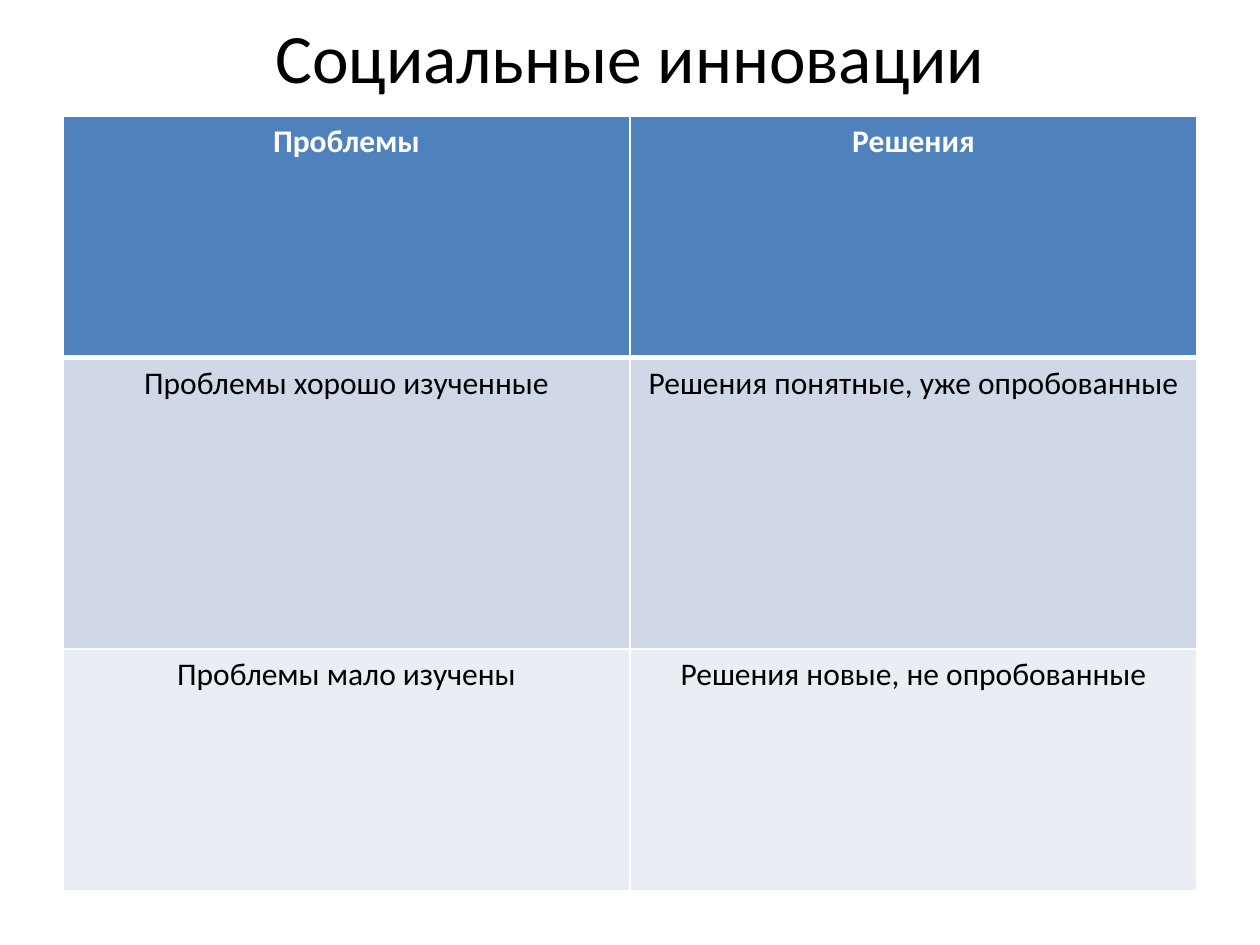
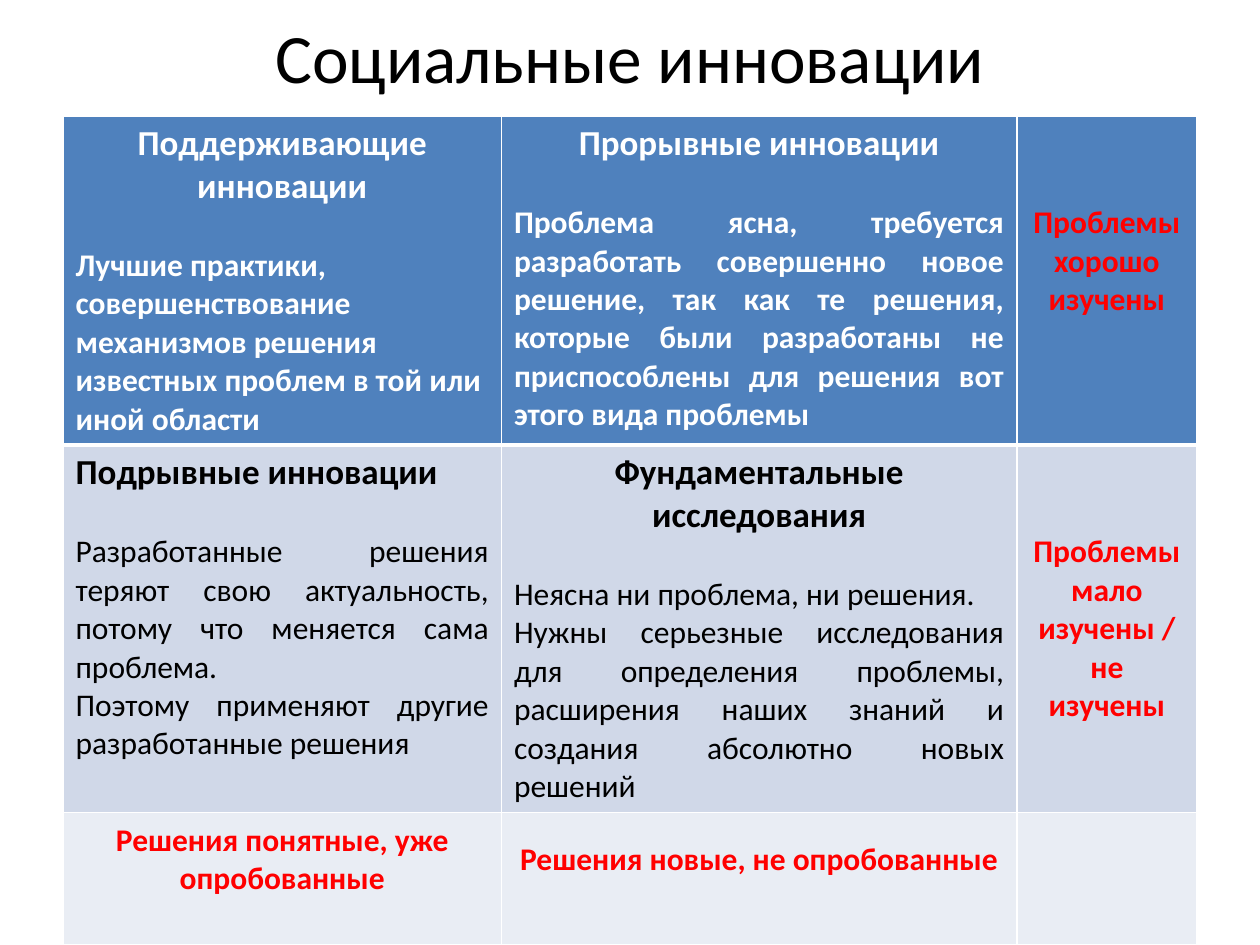
"""Build two slides with tables about social innovations."""
import lxml.etree
import pptx
import pptx.dml.color
import pptx.enum.text
import pptx.oxml.ns
import pptx.util

PIXEL = 9144
COLORS = {
    "white": "FFFFFF",
    "black": "000000",
    "red": "FF0000",
    "header": "4F81BD",
    "band": "D0D8E8",
    "light band": "E9EDF4",
}
ROW_FILLS = ["header", "band", "light band"]
ALIGN = pptx.enum.text.PP_ALIGN
ANCHOR = pptx.enum.text.MSO_ANCHOR

STYLES = {
    "title": {"font": {"size": 39.6, "bold": False}, "paragraph": {"alignment": ALIGN.CENTER}},
    "heading": {"font": {"size": 20, "bold": True}, "paragraph": {"alignment": ALIGN.CENTER}},
    "left heading": {"font": {"size": 20, "bold": True}, "paragraph": {"alignment": ALIGN.LEFT}},
    "label": {"font": {"size": 18, "bold": True}, "paragraph": {"alignment": ALIGN.CENTER}},
    "centered": {"font": {"size": 18, "bold": False}, "paragraph": {"alignment": ALIGN.CENTER}},
    "bold left": {"font": {"size": 18, "bold": True}, "paragraph": {"alignment": ALIGN.LEFT}},
    "bold body": {"font": {"size": 18, "bold": True}, "paragraph": {"alignment": ALIGN.JUSTIFY}},
    "body": {"font": {"size": 18, "bold": False}, "paragraph": {"alignment": ALIGN.JUSTIFY}},
}
GAP = pptx.util.Pt(22)
RAISED = {"vertical_anchor": ANCHOR.MIDDLE, "margin_bottom": 35 * PIXEL}
MIDDLE = {"vertical_anchor": ANCHOR.MIDDLE}


def set_attributes(target, values):
    """Set every named value on the target."""
    for name, value in values.items():
        setattr(target, name, value)


class SlideBuilder:
    """Holds the shared style and the current slide."""

    font_name = "Calibri"

    def __init__(self, presentation):
        self.presentation = presentation
        self.slide = None

    def add_slide(self, title):
        """Start a slide with a title."""
        self.slide = self.presentation.slides.add_slide(self.presentation.slide_layouts[5])
        shape = self.slide.shapes.title
        box = {"left": 50, "top": 13, "width": 900, "height": 63}
        set_attributes(shape, {name: value * PIXEL for name, value in box.items()})
        frame = shape.text_frame
        set_attributes(frame, {"vertical_anchor": ANCHOR.MIDDLE, "word_wrap": True,
                               "auto_size": pptx.enum.text.MSO_AUTO_SIZE.NONE})
        self.add_text(frame.paragraphs[0], title, "title", "black")

    def add_text(self, paragraph, text, style, color):
        """Fill one paragraph with formatted text."""
        run = paragraph.add_run()
        run.text = text
        set_attributes(paragraph, STYLES[style]["paragraph"])
        values = dict(STYLES[style]["font"], name=self.font_name)
        values["size"] = pptx.util.Pt(values["size"])
        set_attributes(run.font, values)
        run.font.color.rgb = pptx.dml.color.RGBColor.from_string(COLORS[color])

    def add_borders(self, cell, row):
        """Draw white cell borders, thicker below the header."""
        widths = {"lnL": 1, "lnR": 1, "lnT": 3 if row == 1 else 1, "lnB": 3 if row == 0 else 1}
        qualified = pptx.oxml.ns.qn
        properties = cell._tc.get_or_add_tcPr()
        for side, width in widths.items():
            line = lxml.etree.SubElement(properties, qualified(f"a:{side}"), w=str(pptx.util.Pt(width)))
            fill = lxml.etree.SubElement(line, qualified("a:solidFill"))
            lxml.etree.SubElement(fill, qualified("a:srgbClr"), val=COLORS["white"])

    def fill_cell(self, cell, row, layout, entries):
        """Format one cell and add its paragraphs."""
        self.add_borders(cell, row)
        cell.fill.solid()
        cell.fill.fore_color.rgb = pptx.dml.color.RGBColor.from_string(COLORS[ROW_FILLS[row]])
        set_attributes(cell, layout)
        for index, (text, style, color) in enumerate(entries):
            frame = cell.text_frame
            paragraph = frame.add_paragraph() if index else frame.paragraphs[0]
            self.add_text(paragraph, text, style, color)
            if index == 1:
                paragraph.space_before = GAP

    def add_table(self, widths, heights, rows):
        """Add a table below the title."""
        bounds = [50, 92, sum(widths), sum(heights)]
        shape = self.slide.shapes.add_table(len(heights), len(widths), *(value * PIXEL for value in bounds))
        table = shape.table
        for column, width in zip(table.columns, widths):
            column.width = width * PIXEL
        for row, height in zip(table.rows, heights):
            row.height = height * PIXEL
        for row_index, row in enumerate(rows):
            for column_index, (layout, entries) in enumerate(row):
                self.fill_cell(table.cell(row_index, column_index), row_index, layout, entries)


OVERVIEW = [
    [({}, [(text, style, color)]) for text in texts]
    for texts, style, color in [
        (["Проблемы", "Решения"], "label", "white"),
        (["Проблемы хорошо изученные", "Решения понятные, уже опробованные"], "centered", "black"),
        (["Проблемы мало изучены", "Решения новые, не опробованные"], "centered", "black"),
    ]
]

INNOVATION_TYPES = [
    [
        ({}, [("Поддерживающие инновации", "heading", "white"),
              ("Лучшие практики, совершенствование механизмов решения известных проблем "
               "в той или иной области", "bold left", "white")]),
        ({}, [("Прорывные инновации", "heading", "white"),
              ("Проблема ясна, требуется разработать совершенно новое решение, так как те решения, "
               "которые были разработаны не приспособлены для решения вот этого вида проблемы",
               "bold body", "white")]),
        (RAISED, [("Проблемы хорошо изучены", "label", "red")]),
    ],
    [
        ({}, [("Подрывные инновации", "left heading", "black"),
              ("Разработанные решения теряют свою актуальность, потому что меняется сама проблема.",
               "body", "black"),
              ("Поэтому применяют другие разработанные решения", "body", "black")]),
        ({}, [("Фундаментальные исследования", "heading", "black"),
              ("Неясна ни проблема, ни решения.", "body", "black"),
              ("Нужны серьезные исследования для определения проблемы, расширения наших знаний "
               "и создания абсолютно новых решений", "body", "black")]),
        (MIDDLE, [("Проблемы мало изучены / не изучены", "label", "red")]),
    ],
    [
        (RAISED, [("Решения понятные, уже опробованные", "label", "red")]),
        (RAISED, [("Решения новые, не опробованные", "label", "red")]),
        ({}, []),
    ],
]


def main():
    """Build and save the presentation."""
    presentation = pptx.Presentation()
    presentation.slide_width = 1000 * PIXEL
    presentation.slide_height = 750 * PIXEL
    builder = SlideBuilder(presentation)
    tables = [
        ([450, 450], [192, 231, 192], OVERVIEW),
        ([348, 409, 143], [260, 290, 105], INNOVATION_TYPES),
    ]
    for widths, heights, rows in tables:
        builder.add_slide("Социальные инновации")
        builder.add_table(widths, heights, rows)
    presentation.save("out.pptx")


if __name__ == "__main__":
    main()
